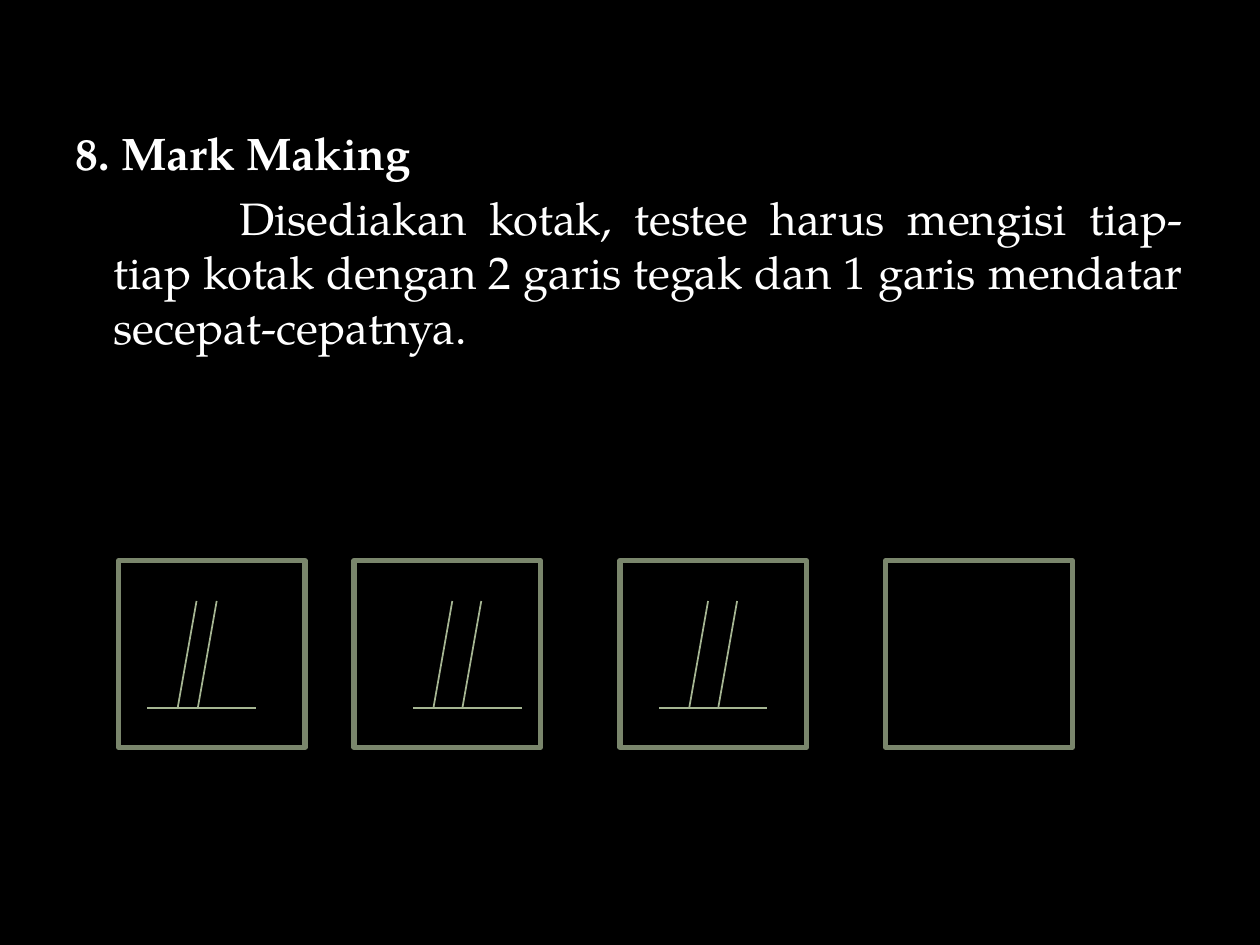
from pptx import Presentation
from pptx.dml.color import RGBColor
from pptx.enum.shapes import MSO_CONNECTOR, MSO_SHAPE
from pptx.enum.text import MSO_ANCHOR, MSO_AUTO_SIZE, PP_ALIGN
from pptx.oxml.xmlchemy import OxmlElement
from pptx.util import Inches, Pt

STRAIGHT = MSO_CONNECTOR.STRAIGHT
PROCESS = MSO_SHAPE.FLOWCHART_PROCESS
JUSTIFY = PP_ALIGN.JUSTIFY
TOP = MSO_ANCHOR.TOP
NO_FIT = MSO_AUTO_SIZE.NONE

COLORS = {"background": "000000", "text": "FFFFFF", "box": "7A866C", "mark": "A5B592"}
FONT = {"name": "TeX Gyre Pagella", "size": Pt(26)}
PARAGRAPHS = [
    ("8. Mark Making", True, -0.3),
    ("Disediakan kotak, testee harus mengisi tiap-tiap kotak dengan 2 garis tegak "
     "dan 1 garis mendatar secepat-cepatnya.", False, 1),
]
BOX_LEFTS = [0.94, 2.81, 4.92, 7.03]
BOX_TOP, BOX_SIZE = 4.45, 1.48
MARKS = [(1.17, (1.41, 1.57)), (3.28, (3.44, 3.67)), (5.23, (5.47, 5.7))]
MARK_TOP, MARK_BOTTOM = 4.77, 5.62
MARK_WIDTH, MARK_SLANT = 0.86, 0.15


def color(name):
    return RGBColor.from_string(COLORS[name])


def set_attributes(target, values):
    for name, value in values.items():
        setattr(target, name, value)


def add_paragraph(para, text, bold, first_indent):
    set_attributes(para, {"alignment": JUSTIFY, "space_before": Pt(6)})
    properties = para._p.get_or_add_pPr()
    properties.set("marL", str(Inches(0.3)))
    properties.set("indent", str(Inches(first_indent)))
    properties.append(OxmlElement("a:buNone"))
    span = para.add_run()
    span.text = text
    set_attributes(span.font, {**FONT, "bold": bold})
    span.font.color.rgb = color("text")


def fill_body(body):
    set_attributes(body, {"left": Inches(0.5), "top": Inches(0.94),
                          "width": Inches(9), "height": Inches(5.76)})
    frame = body.text_frame
    set_attributes(frame, {"word_wrap": True, "auto_size": NO_FIT, "vertical_anchor": TOP})
    for index, content in enumerate(PARAGRAPHS):
        para = frame.add_paragraph() if index else frame.paragraphs[0]
        add_paragraph(para, *content)


def add_box(page, left):
    box = page.shapes.add_shape(PROCESS, Inches(left), Inches(BOX_TOP),
                                Inches(BOX_SIZE), Inches(BOX_SIZE))
    box.shadow.inherit = False
    box.fill.solid()
    box.fill.fore_color.rgb = color("background")
    box.line.color.rgb = color("box")
    box.line.width = Pt(3)


def add_line(page, *points):
    line = page.shapes.add_connector(STRAIGHT, *(Inches(point) for point in points))
    line.line.color.rgb = color("mark")
    line.line.width = Pt(1)
    line._element.spPr.append(OxmlElement("a:effectLst"))


def add_mark(page, base_left, stroke_feet):
    for foot in stroke_feet:
        add_line(page, foot + MARK_SLANT, MARK_TOP, foot, MARK_BOTTOM)
    add_line(page, base_left, MARK_BOTTOM, base_left + MARK_WIDTH, MARK_BOTTOM)


def main():
    deck = Presentation()
    set_attributes(deck, {"slide_width": Inches(10), "slide_height": Inches(7.5)})
    page = deck.slides.add_slide(deck.slide_layouts[1])
    page.background.fill.solid()
    page.background.fill.fore_color.rgb = color("background")
    title = page.shapes.title._element
    title.getparent().remove(title)
    fill_body(page.placeholders[1])
    for left in BOX_LEFTS:
        add_box(page, left)
    for base_left, stroke_feet in MARKS:
        add_mark(page, base_left, stroke_feet)
    deck.save("out.pptx")


if __name__ == "__main__":
    main()
